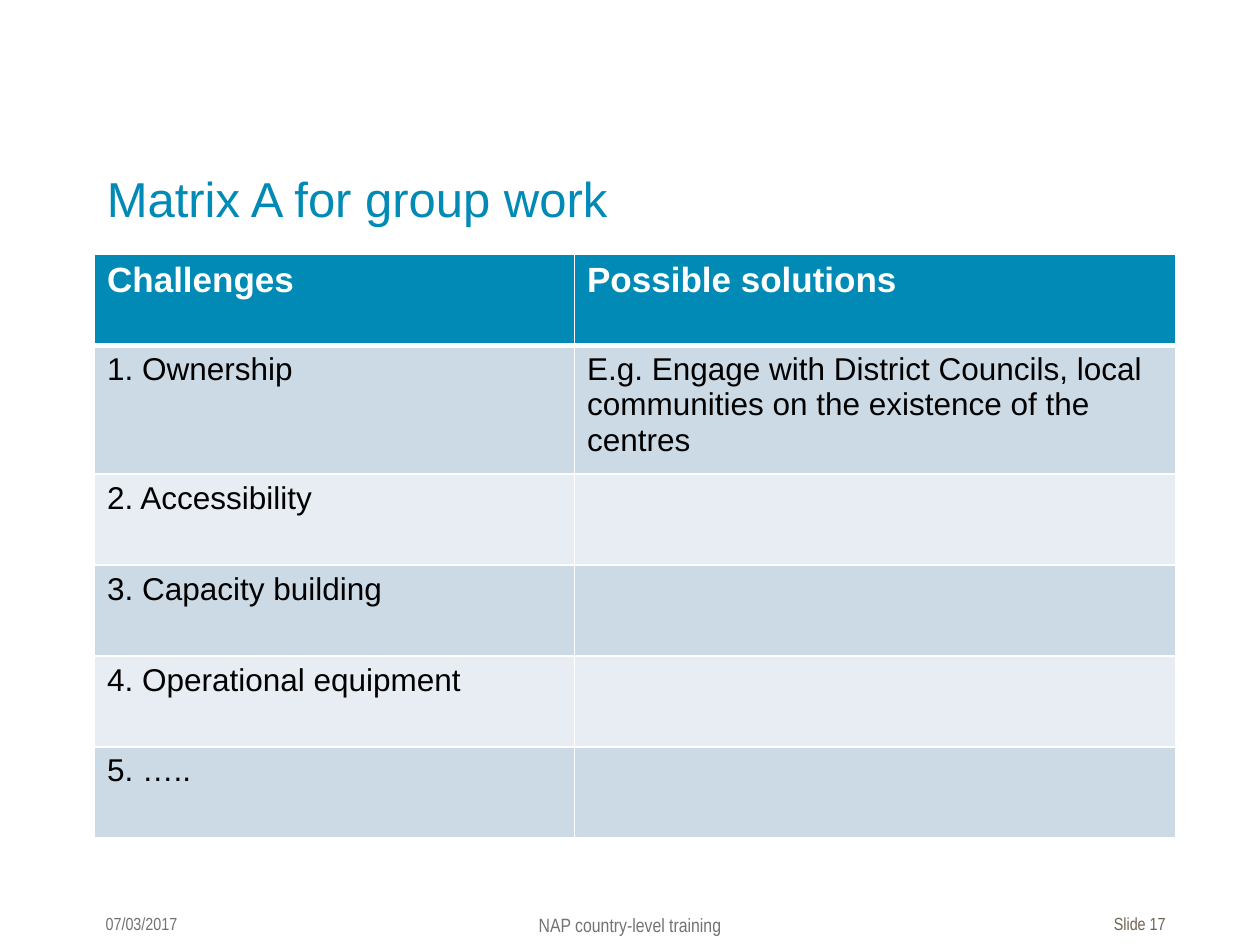
from typing import NamedTuple

from lxml.etree import SubElement
from pptx import Presentation
from pptx.dml.color import RGBColor
from pptx.enum.text import MSO_ANCHOR as Anchor, PP_ALIGN as Align
from pptx.oxml.ns import qn
from pptx.util import Pt

BLUE, WHITE, BLACK = "008AB5", "FFFFFF", "000000"
GREY, BROWN = "727272", "6E6452"
BANDS = ("CCDAE5", "E7EDF3")
NARROW = "Arial Narrow"


class Box(NamedTuple):
    left: float
    top: float
    width: float
    height: float


class Row(NamedTuple):
    height: float
    cells: tuple[str, str]


COLS = (274.3, 343.4)
ROWS = (
    Row(52, ("Challenges", "Possible solutions")),
    Row(73.5, ("1. Ownership", "E.g. Engage with District Councils, local "
               "communities on the existence of the centres")),
    Row(52, ("2. Accessibility", "")),
    Row(52, ("3. Capacity building", "")),
    Row(52, ("4. Operational equipment", "")),
    Row(52, ("5. …..", "")),
)


def color(code: str) -> RGBColor:
    return RGBColor.from_string(code)


def write(frame, text: str, *, size: float, ink: str, face: str = "Arial",
          bold: bool = False, align=Align.LEFT) -> None:
    para = frame.paragraphs[0]
    para.alignment = align
    if text:
        para.add_run().text = text
    font = para.font
    font.size, font.name, font.bold = Pt(size), face, bold
    font.color.rgb = color(ink)


def add_text(slide, box: Box, text: str, *, anchor=Anchor.TOP,
             right: float = 7.2, **style) -> None:
    frame = slide.shapes.add_textbox(*map(Pt, box)).text_frame
    frame.word_wrap = True
    frame.vertical_anchor = anchor
    frame.margin_right = Pt(right)
    write(frame, text, **style)


def set_edges(cell, **widths: float) -> None:
    """Draw white cell borders; the keywords are L, R, T and B, in points."""
    props = cell._tc.get_or_add_tcPr()
    for spot, (side, width) in enumerate(widths.items()):
        line = props.makeelement(qn(f"a:ln{side}"), {"w": str(Pt(width))})
        fill = SubElement(line, qn("a:solidFill"))
        SubElement(fill, qn("a:srgbClr"), val=WHITE)
        props.insert(spot, line)


def add_matrix(slide, left: float, top: float) -> None:
    height = sum(row.height for row in ROWS)
    table = slide.shapes.add_table(
        len(ROWS), len(COLS), Pt(left), Pt(top), Pt(sum(COLS)), Pt(height)
    ).table
    table.horz_banding = False
    for col, width in zip(table.columns, COLS):
        col.width = Pt(width)
    for i, row in enumerate(ROWS):
        head = i == 0
        table.rows[i].height = Pt(row.height)
        for j, text in enumerate(row.cells):
            cell = table.cell(i, j)
            cell.fill.solid()
            cell.fill.fore_color.rgb = color(BLUE if head else BANDS[(i - 1) % 2])
            set_edges(cell, L=1, R=1, T=3 if i == 1 else 1, B=3 if head else 1)
            write(cell.text_frame, text, size=20 if head else 18,
                  ink=WHITE if head else BLACK, bold=head)


def main() -> None:
    deck = Presentation()
    deck.slide_width, deck.slide_height = Pt(720), Pt(540)
    slide = deck.slides.add_slide(deck.slide_layouts[6])
    add_text(slide, Box(54, 88.5, 612, 49), "Matrix A for group work",
             size=28, ink=BLUE, anchor=Anchor.MIDDLE)
    add_matrix(slide, 54, 145.5)
    foot, tall = 518.4, 19.4
    add_text(slide, Box(53.3, foot, 102.2, tall), "07/03/2017",
             size=10, ink=GREY, face=NARROW)
    add_text(slide, Box(225.4, foot, 269.3, tall), "NAP country-level training",
             size=11, ink=GREY, face=NARROW, align=Align.CENTER)
    add_text(slide, Box(593.3, foot, 72.7, tall), "Slide 17", right=0,
             size=10, ink=BROWN, face=NARROW, align=Align.RIGHT)
    deck.save("out.pptx")


if __name__ == "__main__":
    main()
